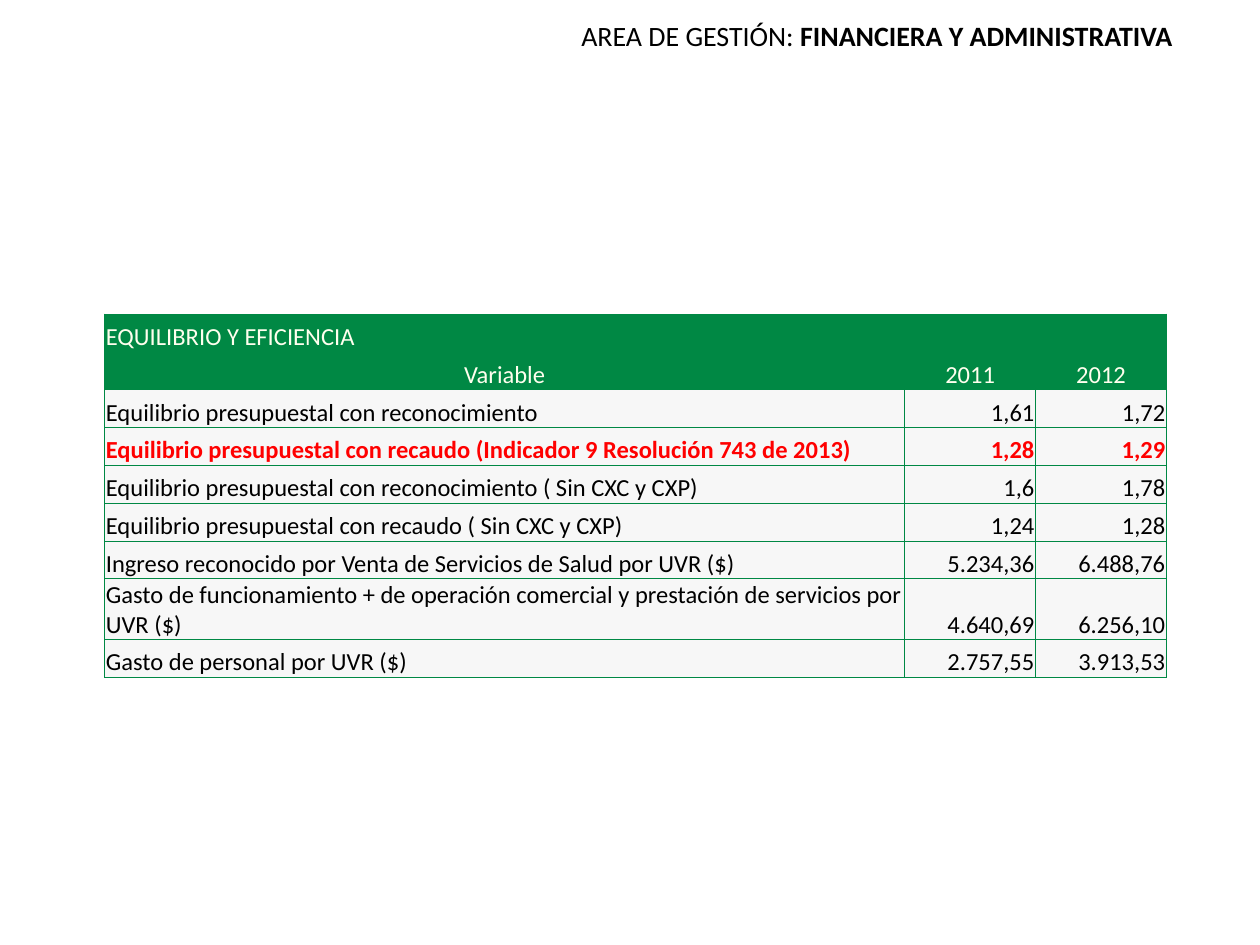
"""Build the slide with the financial balance and efficiency table."""
from lxml.etree import SubElement
from pptx import Presentation
from pptx.dml.color import RGBColor
from pptx.enum.text import MSO_ANCHOR as Anchor, PP_ALIGN as Align
from pptx.oxml.ns import qn
from pptx.util import Pt

COLORS = {"green": "008844", "cream": "FFFFEE", "gray": "F7F7F7", "black": "000000", "red": "FF0000"}
ROWS = [
    ("EQUILIBRIO Y EFICIENCIA", "", ""),
    ("Variable", "2011", "2012"),
    ("Equilibrio presupuestal con reconocimiento", "1,61", "1,72"),
    ("Equilibrio presupuestal con recaudo (Indicador 9 Resolución 743 de 2013)", "1,28", "1,29"),
    ("Equilibrio presupuestal con reconocimiento ( Sin CXC y CXP)", "1,6", "1,78"),
    ("Equilibrio presupuestal con recaudo ( Sin CXC y CXP)", "1,24", "1,28"),
    ("Ingreso reconocido por Venta de Servicios de Salud por UVR ($)", "5.234,36", "6.488,76"),
    ("Gasto de funcionamiento + de operación comercial y prestación de servicios por UVR ($)", "4.640,69", "6.256,10"),
    ("Gasto de personal por UVR ($)", "2.757,55", "3.913,53"),
]
TITLE_ROW, HEADER_ROW, KEY_ROW, TALL_ROW = 0, 1, 3, 7
COLUMN_WIDTHS = [457.2, 74.8, 74.8]
ROW_HEIGHT, TALL_HEIGHT = 21.6, 34.4


def set_font(paragraph, size, color):
    paragraph.font.name = "Calibri"
    paragraph.font.size = Pt(size)
    paragraph.font.color.rgb = RGBColor.from_string(COLORS[color])


def add_borders(cell, color):
    properties = cell._tc.get_or_add_tcPr()
    for side in ("lnL", "lnR", "lnT", "lnB"):
        line = SubElement(properties, qn(f"a:{side}"), w=str(Pt(0.5)))
        fill = SubElement(line, qn("a:solidFill"))
        SubElement(fill, qn("a:srgbClr"), val=COLORS[color])


presentation = Presentation()
presentation.slide_width, presentation.slide_height = Pt(720), Pt(540)
slide = presentation.slides.add_slide(presentation.slide_layouts[5])

title = slide.shapes.title
title.left, title.top, title.width, title.height = Pt(36.7), Pt(0.7), Pt(640.5), Pt(39)
title.text_frame.vertical_anchor = Anchor.MIDDLE
paragraph = title.text_frame.paragraphs[0]
paragraph.alignment = Align.RIGHT
set_font(paragraph, 16, "black")
paragraph.add_run().text = "AREA DE GESTIÓN: "
area = paragraph.add_run()
area.text = "FINANCIERA Y ADMINISTRATIVA"
area.font.bold = True

table_height = ROW_HEIGHT * (len(ROWS) - 1) + TALL_HEIGHT
table = slide.shapes.add_table(
    len(ROWS), len(COLUMN_WIDTHS), Pt(59.8), Pt(179.5), Pt(sum(COLUMN_WIDTHS)), Pt(table_height)
).table
for column, width in zip(table.columns, COLUMN_WIDTHS):
    column.width = Pt(width)

for row_index, values in enumerate(ROWS):
    table.rows[row_index].height = Pt(TALL_HEIGHT if row_index == TALL_ROW else ROW_HEIGHT)
    is_header = row_index <= HEADER_ROW
    text_color = "cream" if is_header else "red" if row_index == KEY_ROW else "black"
    for column_index, value in enumerate(values):
        cell = table.cell(row_index, column_index)
        add_borders(cell, "green")
        cell.fill.solid()
        cell.fill.fore_color.rgb = RGBColor.from_string(COLORS["green" if is_header else "gray"])
        cell.vertical_anchor = Anchor.BOTTOM
        cell.margin_left = cell.margin_right = cell.margin_top = Pt(0.7)
        cell.margin_bottom = 0
        paragraph = cell.text_frame.paragraphs[0]
        paragraph.text = value
        set_font(paragraph, 14, text_color)
        paragraph.font.bold = row_index == KEY_ROW
        if row_index == HEADER_ROW:
            paragraph.alignment = Align.CENTER
        else:
            paragraph.alignment = Align.RIGHT if column_index else Align.LEFT

table.cell(TITLE_ROW, 0).merge(table.cell(TITLE_ROW, len(COLUMN_WIDTHS) - 1))

presentation.save("out.pptx")
